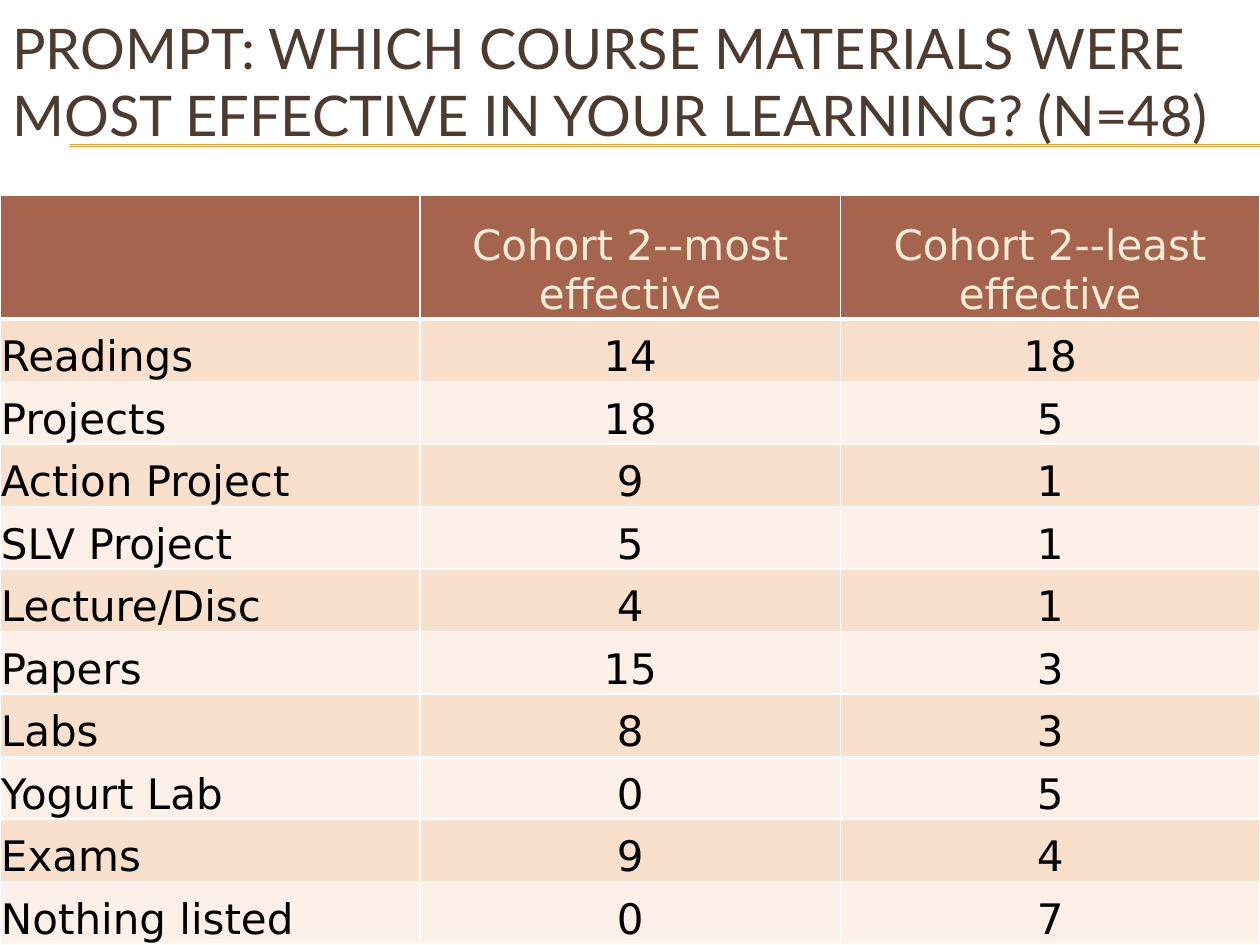
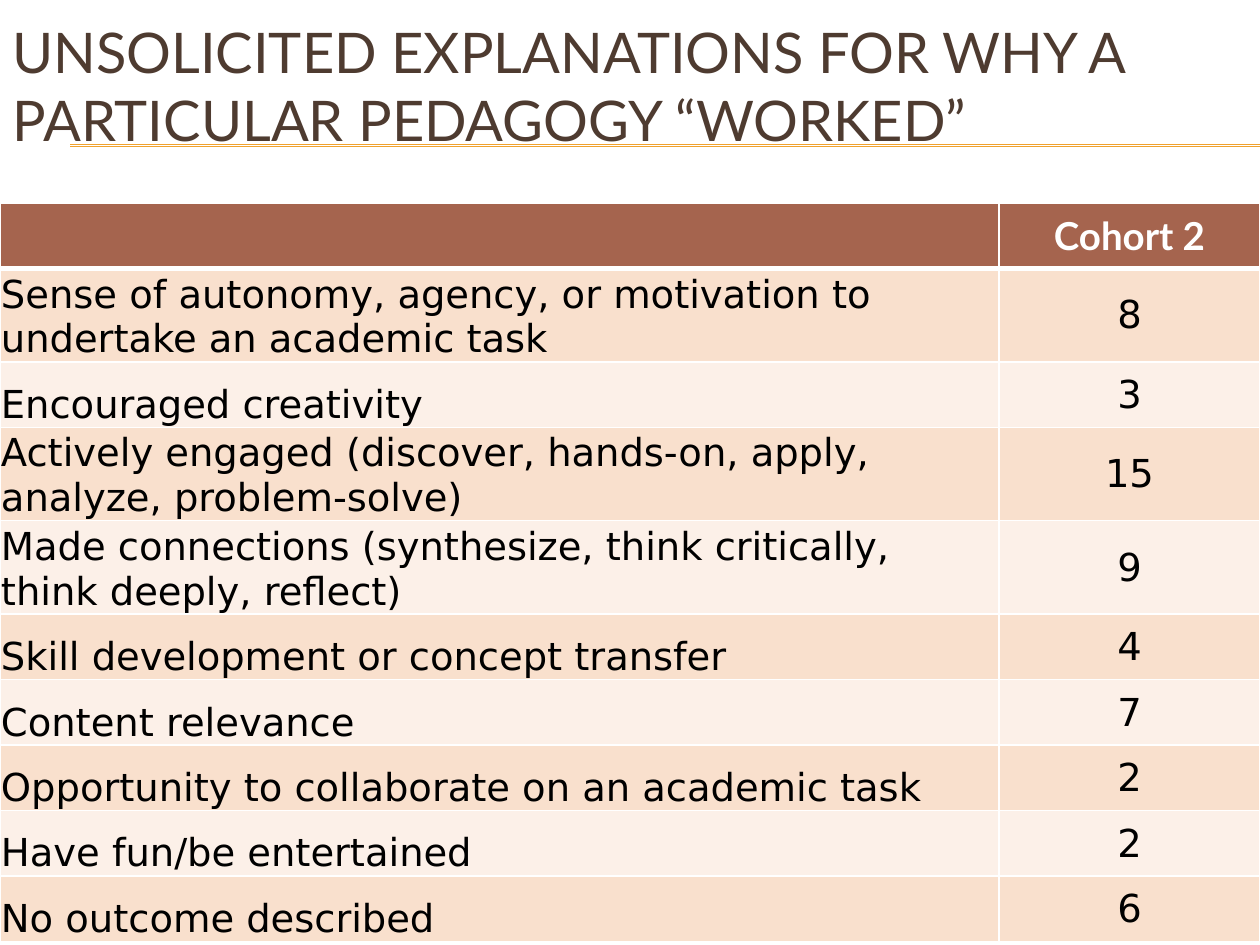
from lxml import etree
from pptx import Presentation
from pptx.dml.color import RGBColor
from pptx.enum.shapes import MSO_CONNECTOR
from pptx.enum.text import MSO_ANCHOR, PP_ALIGN
from pptx.oxml.ns import qn
from pptx.util import Cm, Pt

# Content
PAGES = [
    dict(
        title="PROMPT: WHICH COURSE MATERIALS WERE MOST EFFECTIVE IN YOUR LEARNING? (N=48)",
        title_h=3.25, top=3.94, size=24, cols=[8.47, 8.47, 8.46],
        head_h=2.49, row_h=1.26, tall_h=1.26,
        head=["", "Cohort 2--most effective", "Cohort 2--least effective"],
        plain_head=True,
        rows=[
            ("Readings", 14, 18),
            ("Projects", 18, 5),
            ("Action Project", 9, 1),
            ("SLV Project", 5, 1),
            ("Lecture/Disc", 4, 1),
            ("Papers", 15, 3),
            ("Labs", 8, 3),
            ("Yogurt Lab", 0, 5),
            ("Exams", 9, 4),
            ("Nothing listed", 0, 7),
        ],
    ),
    dict(
        title="UNSOLICITED EXPLANATIONS FOR WHY A PARTICULAR PEDAGOGY “WORKED”",
        title_h=3.43, top=4.09, size=22, cols=[20.14, 5.26],
        head_h=1.32, row_h=1.32, tall_h=1.83,
        head=["", "Cohort 2"],
        plain_head=False,
        rows=[
            ("Sense of autonomy, agency, or motivation to undertake an academic task", 8),
            ("Encouraged creativity", 3),
            ("Actively engaged (discover, hands-on, apply, analyze, problem-solve)", 15),
            ("Made connections (synthesize, think critically, think deeply, reflect)", 9),
            ("Skill development or concept transfer", 4),
            ("Content relevance", 7),
            ("Opportunity to collaborate on an academic task", 2),
            ("Have fun/be entertained", 2),
            ("No outcome described", 6),
        ],
    ),
]

# Shared style
WIDE, HIGH = 25.4, 19.05
RULE_X, RULE_YS = 1.42, (2.92, 2.95)
LONG = 50  # labels beyond this many letters take two lines
LATO, DEJA = "Lato", "DejaVu Sans"
WHITE = RGBColor(0xFF, 0xFF, 0xFF)
BLACK = RGBColor(0, 0, 0)
BROWN = RGBColor(0x4E, 0x3B, 0x30)
GOLD = RGBColor(0xF0, 0xA2, 0x2E)
RUST = RGBColor(0xA5, 0x64, 0x4E)
CREAM = RGBColor(0xFC, 0xEC, 0xD5)
BANDS = RGBColor(0xF9, 0xE0, 0xCD), RGBColor(0xFC, 0xF0, 0xE8)
MID, LOW = MSO_ANCHOR.MIDDLE, MSO_ANCHOR.BOTTOM
LEFT, CENTER = PP_ALIGN.LEFT, PP_ALIGN.CENTER
STRAIGHT = MSO_CONNECTOR.STRAIGHT


def add_run(frame, text, size, font, color, bold=False, align=LEFT):
    para = frame.paragraphs[0]
    para.alignment = align
    run = para.add_run()
    run.text = text
    run.font.size = Pt(size)
    run.font.name = font
    run.font.bold = bold
    run.font.color.rgb = color


def add_rules(slide):
    for y in RULE_YS:
        rule = slide.shapes.add_connector(STRAIGHT, Cm(RULE_X), Cm(y), Cm(WIDE), Cm(y))
        rule.line.color.rgb = GOLD
        rule.line.width = Pt(0.75)
        etree.SubElement(rule._element.spPr, qn("a:effectLst"))


def add_title(slide, text, high):
    box = slide.shapes.add_textbox(0, 0, Cm(WIDE), Cm(high))
    frame = box.text_frame
    frame.word_wrap = True
    frame.vertical_anchor = MID
    add_run(frame, text, 32, LATO, BROWN)


def paint(cell, fill, top, bottom):
    """Set white borders, then the fill."""
    props = cell._tc.get_or_add_tcPr()
    for side, width in (("L", 1), ("R", 1), ("T", top), ("B", bottom)):
        line = etree.SubElement(props, qn("a:ln" + side), w=str(Pt(width)))
        solid = etree.SubElement(line, qn("a:solidFill"))
        etree.SubElement(solid, qn("a:srgbClr"), val=str(WHITE))
    cell.fill.solid()
    cell.fill.fore_color.rgb = fill


def trim(cell):
    cell.margin_left = cell.margin_right = cell.margin_top = Cm(0.02)
    cell.margin_bottom = 0


def add_grid(slide, page):
    rows, size, plain = page["rows"], page["size"], page["plain_head"]
    highs = [page["head_h"]]
    highs += [page["tall_h"] if len(row[0]) > LONG else page["row_h"] for row in rows]
    grid = slide.shapes.add_table(
        len(highs), len(page["cols"]), 0, Cm(page["top"]), Cm(WIDE), Cm(sum(highs))
    ).table
    for col, wide in zip(grid.columns, page["cols"]):
        col.width = Cm(wide)
    for row, high in zip(grid.rows, highs):
        row.height = Cm(high)

    # Header row
    for c, text in enumerate(page["head"]):
        cell = grid.cell(0, c)
        paint(cell, RUST, 1, 3)
        if not text:
            continue
        if plain:
            trim(cell)
        cell.vertical_anchor = LOW if plain else MID
        font, color = (DEJA, CREAM) if plain else (LATO, WHITE)
        add_run(cell.text_frame, text, size, font, color, not plain, CENTER)

    # Banded body rows
    for r, row in enumerate(rows):
        for c, value in enumerate(row):
            cell = grid.cell(r + 1, c)
            paint(cell, BANDS[r % 2], 1 if r else 3, 1)
            trim(cell)
            cell.vertical_anchor = LOW if plain or c == 0 else MID
            add_run(cell.text_frame, str(value), size, DEJA, BLACK,
                    align=CENTER if c else LEFT)


def main():
    deck = Presentation()
    deck.slide_width, deck.slide_height = Cm(WIDE), Cm(HIGH)
    for page in PAGES:
        slide = deck.slides.add_slide(deck.slide_layouts[6])
        add_rules(slide)
        add_title(slide, page["title"], page["title_h"])
        add_grid(slide, page)
    deck.save("out.pptx")


if __name__ == "__main__":
    main()
